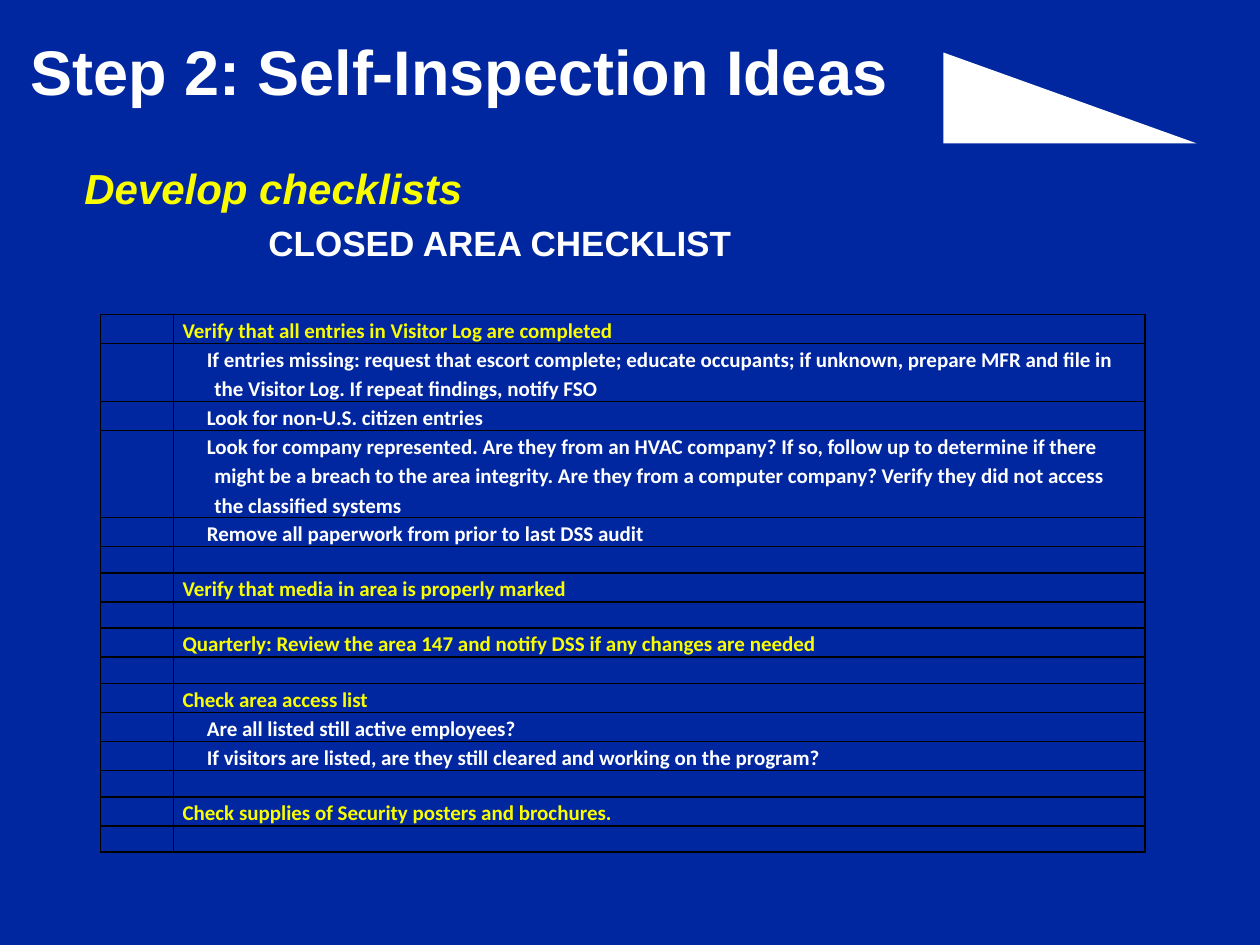
from lxml.etree import SubElement
from pptx import Presentation
from pptx.dml.color import RGBColor
from pptx.enum.shapes import MSO_SHAPE as SHAPE
from pptx.enum.text import MSO_ANCHOR as ANCHOR, PP_ALIGN as ALIGN
from pptx.oxml.ns import qn
from pptx.util import Cm, Pt

COLORS = {"bg": "00279F", "white": "FFFFFF", "yellow": "FAFD00", "border": "000000"}
HEADING = {"name": "Arial", "bold": True, "italic": False}
CELL = {"name": "Calibri", "size": Pt(12), "bold": True, "italic": False}
MARGINS = ("margin_left", "margin_top", "margin_right", "margin_bottom")

CHECKLIST = [
    ("item", "Verify that all entries in Visitor Log are completed", 0.53),
    ("detail", "If entries missing: request that escort complete; educate occupants; "
     "if unknown, prepare MFR and file in the Visitor Log. If repeat findings, notify FSO", 1.09),
    ("detail", "Look for non-U.S. citizen entries", 0.53),
    ("detail", "Look for company represented. Are they from an HVAC company? If so, "
     "follow up to determine if there might be a breach to the area integrity. Are they "
     "from a computer company? Verify they did not access the classified systems", 1.3),
    ("detail", "Remove all paperwork from prior to last DSS audit", 0.53),
    ("gap", "", 0.53),
    ("item", "Verify that media in area is properly marked", 0.53),
    ("gap", "", 0.53),
    ("item", "Quarterly: Review the area 147 and notify DSS if any changes are needed", 0.53),
    ("gap", "", 0.53),
    ("item", "Check area access list", 0.53),
    ("detail", "Are all listed still active employees?", 0.53),
    ("detail", "If visitors are listed, are they still cleared and working on the program?", 0.53),
    ("gap", "", 0.53),
    ("item", "Check supplies of Security posters and brochures.", 0.53),
    ("gap", "", 0.53),
]


def rgb(key):
    return RGBColor.from_string(COLORS[key])


def set_attrs(obj, values):
    for name, value in values.items():
        setattr(obj, name, value)


def set_margins(obj, *sizes):
    set_attrs(obj, {name: Cm(size) for name, size in zip(MARGINS, sizes)})


def add_text(p, text, color, font):
    r = p.add_run()
    r.text = text
    set_attrs(r.font, font)
    r.font.color.rgb = rgb(color)


def set_indent(p, left, first):
    pPr = p._p.get_or_add_pPr()
    pPr.set("marL", str(Cm(left)))
    pPr.set("indent", str(Cm(first)))


def set_borders(cell):
    tcPr = cell._tc.get_or_add_tcPr()
    for side in ("lnL", "lnR", "lnT", "lnB"):
        ln = SubElement(tcPr, qn(f"a:{side}"), w=str(Pt(1)))
        fill = SubElement(ln, qn("a:solidFill"))
        SubElement(fill, qn("a:srgbClr"), val=COLORS["border"])


def place_title(s, x, y, w, h):
    sp = s.shapes.title
    set_attrs(sp, {"left": Cm(x), "top": Cm(y), "width": Cm(w), "height": Cm(h)})
    tf = sp.text_frame
    set_margins(tf, 0, 0.13, 0, 0)
    tf.vertical_anchor = ANCHOR.TOP
    p = tf.paragraphs[0]
    p.alignment = ALIGN.LEFT
    add_text(p, "Step 2: Self-Inspection Ideas", "white", {**HEADING, "size": Pt(36)})


def place_emblem(s, x, y, w, h):
    sp = s.shapes.add_shape(SHAPE.RIGHT_TRIANGLE, Cm(x), Cm(y), Cm(w), Cm(h))
    sp.shadow.inherit = False
    sp.fill.solid()
    sp.fill.fore_color.rgb = rgb("white")
    sp.line.fill.background()


def place_intro(s, x, y, w, h):
    tf = s.shapes.add_textbox(Cm(x), Cm(y), Cm(w), Cm(h)).text_frame
    tf.word_wrap = True
    set_margins(tf, 0, 0.13, 0, 0)
    p = tf.paragraphs[0]
    set_indent(p, 0.61, -0.61)
    add_text(p, "Develop checklists", "yellow", {**HEADING, "size": Pt(24), "italic": True})
    p = tf.add_paragraph()
    p.space_before = Pt(4.8)
    set_indent(p, 4.32, -0.61)
    add_text(p, "CLOSED AREA CHECKLIST", "white", {**HEADING, "size": Pt(20)})


def place_checklist(s, x, y, mark_w, text_w):
    height = sum(row_h for _, _, row_h in CHECKLIST)
    tbl = s.shapes.add_table(len(CHECKLIST), 2, Cm(x), Cm(y),
                             Cm(mark_w + text_w), Cm(height)).table
    set_attrs(tbl, {"first_row": False, "horz_banding": False})
    for col, width in zip(tbl.columns, (mark_w, text_w)):
        col.width = Cm(width)
    for i, (kind, text, row_h) in enumerate(CHECKLIST):
        tbl.rows[i].height = Cm(row_h)
        for cell in tbl.rows[i].cells:
            set_borders(cell)
            cell.fill.background()
            set_margins(cell, 0.18, 0, 0.18, 0)
            cell.text_frame.paragraphs[0]._p.get_or_add_endParaRPr().set("sz", "1200")
        if kind == "gap":
            continue
        p = tbl.cell(i, 1).text_frame.paragraphs[0]
        p.line_spacing = 1.15
        if kind == "detail":
            set_indent(p, 0.64, -0.15)
        add_text(p, text, "yellow" if kind == "item" else "white", CELL)


def main():
    prs = Presentation()
    set_attrs(prs, {"slide_width": Cm(25.4), "slide_height": Cm(19.05)})
    s = prs.slides.add_slide(prs.slide_layouts[5])
    s.background.fill.solid()
    s.background.fill.fore_color.rgb = rgb("bg")
    place_emblem(s, 19.02, 1.06, 5.1, 1.83)
    place_title(s, 0.61, 0.53, 22.43, 1.45)
    place_intro(s, 1.7, 3.15, 20.98, 3.28)
    place_checklist(s, 2.03, 6.34, 1.47, 19.58)
    prs.save("out.pptx")


if __name__ == "__main__":
    main()
